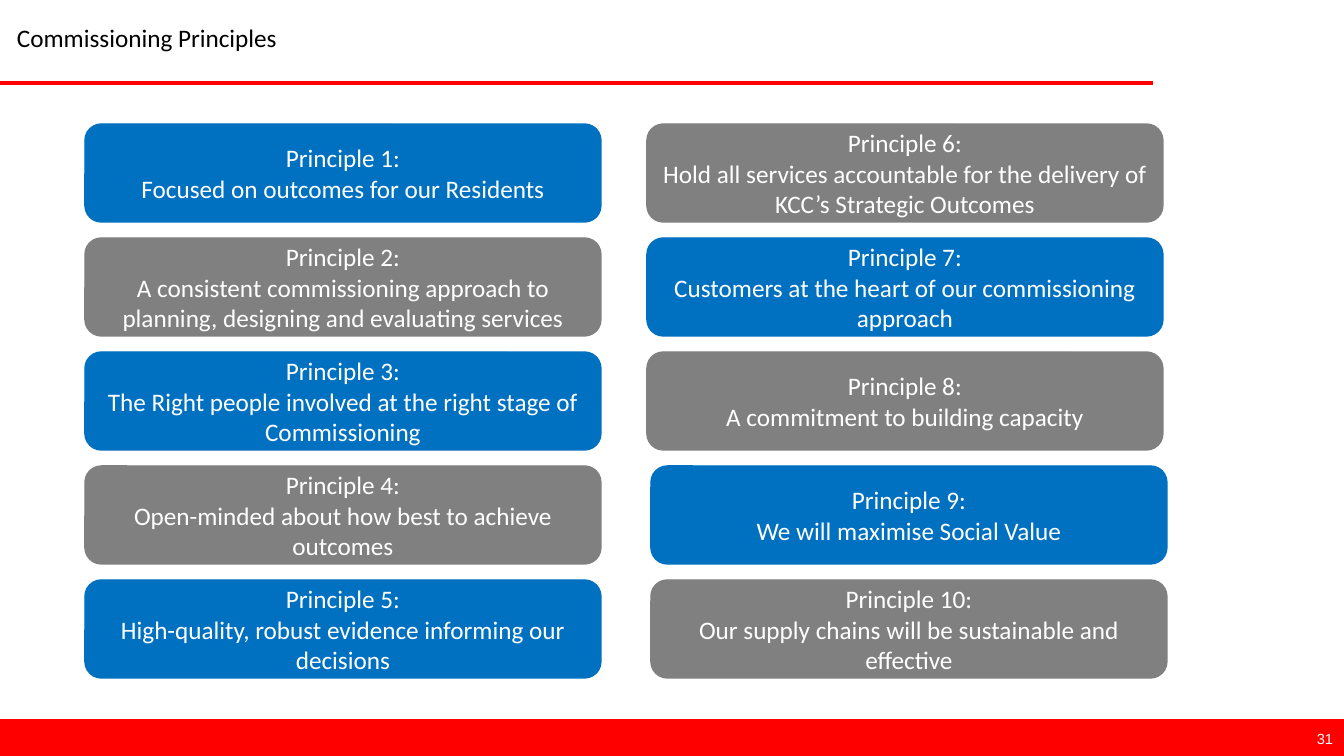
from pptx import Presentation
from pptx.dml.color import RGBColor
from pptx.enum import shapes, text
from pptx.oxml.ns import qn
from pptx.util import Pt
from lxml import etree

TITLE = "Commissioning Principles"
PAGE = "31"
PRINCIPLES = [
    "Focused on outcomes for our Residents",
    "A consistent commissioning approach to planning, designing and evaluating services",
    "The Right people involved at the right stage of Commissioning",
    "Open-minded about how best to achieve outcomes",
    "High-quality, robust evidence informing our decisions",
    "Hold all services accountable for the delivery of KCC’s Strategic Outcomes",
    "Customers at the heart of our commissioning approach",
    "A commitment to building capacity",
    "We will maximise Social Value",
    "Our supply chains will be sustainable and effective",
]
RED, BLUE, GREY, WHITE, BLACK = "FF0000", "0070C0", "808080", "FFFFFF", "000000"

WIDTH, HEIGHT = 1344, 756
ROWS = 5
CARD_W, CARD_H = 516, 98
TOP, ROW_STEP = 124, 114
LEFT_X, RIGHT_X = 85, 647
LAST_RIGHT_SHIFT = 4  # principles 9 and 10 sit slightly further right


def px(n):
    return round(n * 914400 / 100.8)


def rgb(hex_colour):
    return RGBColor.from_string(hex_colour)


def write(frame, lines, size, font, colour, align, anchor):
    frame.word_wrap = True
    frame.vertical_anchor = anchor
    for i, line in enumerate(lines):
        p = frame.paragraphs[0] if i == 0 else frame.add_paragraph()
        p.text = line
        p.alignment = align
        p.font.size, p.font.name = Pt(size), font
        p.font.color.rgb = rgb(colour)


def add_block(kind, box, colour):
    block = slide.shapes.add_shape(kind, *map(px, box))
    block.shadow.inherit = False
    block.fill.solid()
    block.fill.fore_color.rgb = block.line.color.rgb = rgb(colour)
    block.line.width = Pt(1)
    return block


def add_label(box, *style):
    label = slide.shapes.add_textbox(*map(px, box))
    write(label.text_frame, *style)
    return label


prs = Presentation()
prs.slide_width, prs.slide_height = px(WIDTH), px(HEIGHT)
slide = prs.slides.add_slide(prs.slide_layouts[6])

add_block(shapes.MSO_SHAPE.RECTANGLE, (0, 720, WIDTH, 37), RED)

rule = slide.shapes.add_connector(shapes.MSO_CONNECTOR.STRAIGHT, px(-1), px(83), px(1153), px(83))
rule.line.color.rgb = rgb(RED)
rule.line.width = Pt(3)
etree.SubElement(rule._element.spPr, qn("a:effectLst"))

title = add_label((7, 15, 1159, 49), [TITLE], 18, "Calibri", BLACK,
                  text.PP_ALIGN.LEFT, text.MSO_ANCHOR.MIDDLE)
title.text_frame.paragraphs[0].line_spacing = 0.9

for i, principle in enumerate(PRINCIPLES):
    column, row = divmod(i, ROWS)
    x = (LEFT_X, RIGHT_X)[column]
    if column == 1 and row >= 3:
        x += LAST_RIGHT_SHIFT
    card = add_block(shapes.MSO_SHAPE.ROUNDED_RECTANGLE,
                     (x, TOP + row * ROW_STEP, CARD_W, CARD_H), (BLUE, GREY)[i % 2])
    write(card.text_frame, [f"Principle {i + 1}:", principle], 18, "Calibri", WHITE,
          text.PP_ALIGN.CENTER, text.MSO_ANCHOR.MIDDLE)

add_label((1041, 725, 302, 22), [PAGE], 10.5, "Arial", WHITE,
          text.PP_ALIGN.RIGHT, text.MSO_ANCHOR.TOP)

prs.save("out.pptx")
